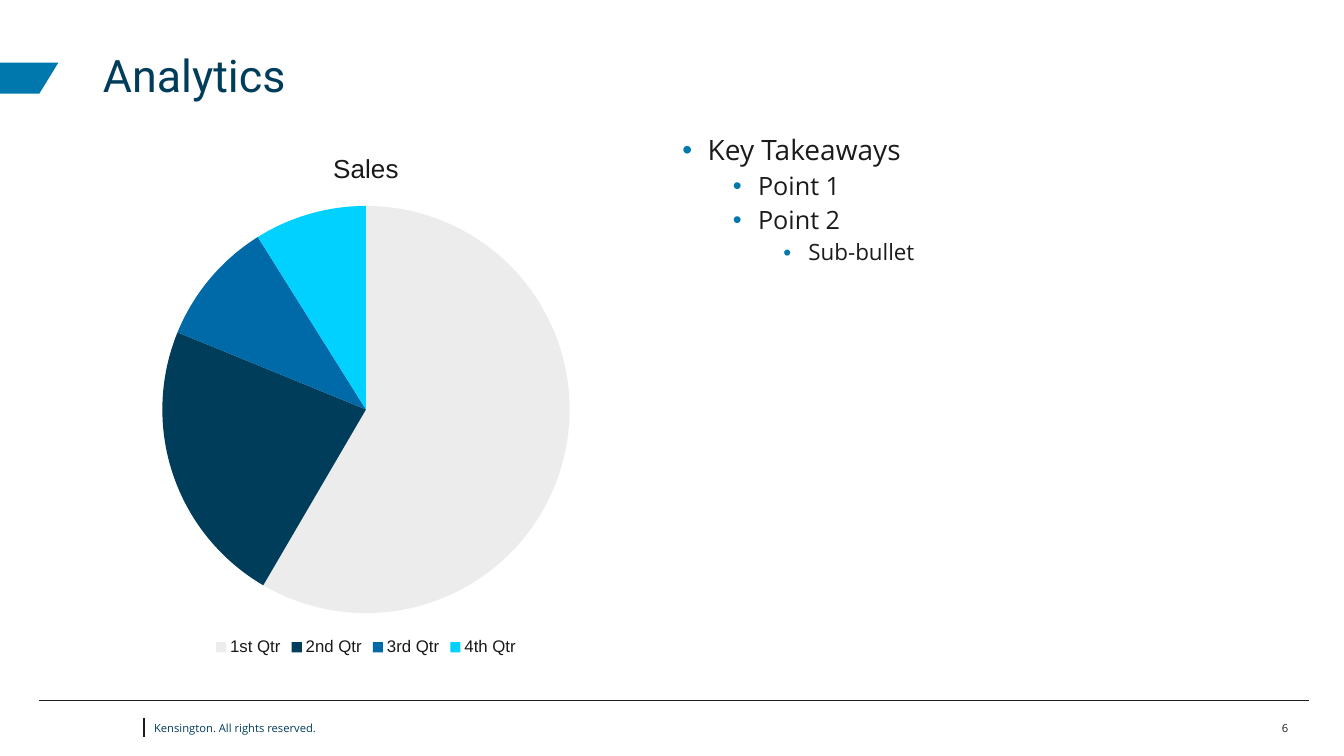
from lxml import etree
from pptx import Presentation
from pptx import util as u
from pptx.chart.data import CategoryChartData
from pptx.dml.color import RGBColor
from pptx.enum import chart as charts, shapes, text
from pptx.oxml import ns

NAVY, BLUE, INK, BLACK, CHART_INK = "003D5A", "0078AE", "1B1B1B", "231F20", "171A17"


def rgb(code):
    return RGBColor.from_string(code)


def style_font(font, name, size, color):
    font.name, font.size, font.color.rgb = name, u.Pt(size), rgb(color)
    font.bold = False


class Page:
    heading_font, body_font, chart_font = "Roboto", "Open Sans", "Arial"

    def __init__(self, deck):
        self.page = deck.slides.add_slide(deck.slide_layouts[5])

    def add_span(self, para, words, font, size, color):
        span = para.add_run()
        span.text = words
        style_font(span.font, font, size, color)

    def place(self, shape, left, top, width, height):
        shape.left, shape.top = u.Inches(left), u.Inches(top)
        shape.width, shape.height = u.Inches(width), u.Inches(height)

    def title(self, words, *area):
        box = self.page.shapes.title
        self.place(box, *area)
        box.text_frame.vertical_anchor = text.MSO_ANCHOR.MIDDLE
        para = box.text_frame.paragraphs[0]
        para.alignment, para.line_spacing = text.PP_ALIGN.LEFT, 0.9
        self.add_span(para, words, self.heading_font, 32, NAVY)

    def text_box(self, *area):
        box = self.page.shapes.add_textbox(*map(u.Inches, area))
        box.text_frame.word_wrap = True
        return box.text_frame

    def label(self, words, color, align, *area):
        para = self.text_box(*area).paragraphs[0]
        para.alignment = align
        self.add_span(para, words, self.body_font, 8, color)

    def bullets(self, items, *area):
        """Set (level, words) pairs as an indented list."""
        frame = self.text_box(*area)
        for index, (level, words) in enumerate(items):
            para = frame.add_paragraph() if index else frame.paragraphs[0]
            para.level, para.line_spacing = level, 0.9
            para.space_before = u.Pt(5 if index else 0)
            props = para._p.get_or_add_pPr()
            props.set("marL", str(u.Inches(0.25 + 0.5 * level)))
            props.set("indent", str(u.Inches(-0.25)))
            color = etree.SubElement(props, ns.qn("a:buClr"))
            etree.SubElement(color, ns.qn("a:srgbClr"), val=BLUE)
            etree.SubElement(props, ns.qn("a:buFont"), typeface="Arial")
            etree.SubElement(props, ns.qn("a:buChar"), char="•")
            self.add_span(para, words, self.body_font, 20 - 2 * level, INK)

    def line(self, color, *ends):
        rule = self.page.shapes.add_connector(
            shapes.MSO_CONNECTOR.STRAIGHT, *map(u.Inches, ends))
        rule.line.color.rgb, rule.line.width = rgb(color), u.Pt(1)
        etree.SubElement(rule._element.spPr, ns.qn("a:effectLst"))

    def polygon(self, color, points):
        corners = [(u.Inches(x), u.Inches(y)) for x, y in points]
        builder = self.page.shapes.build_freeform(*corners[0])
        builder.add_line_segments(corners[1:], close=True)
        shape = builder.convert_to_shape()
        shape.shadow.inherit = False
        shape.fill.solid()
        shape.fill.fore_color.rgb = rgb(color)
        shape.line.fill.background()

    def pie(self, title, slices, *area):
        """Draw a pie from (category, value, color) triples."""
        data = CategoryChartData()
        data.categories = [name for name, _, _ in slices]
        data.add_series("Series 1", [value for _, value, _ in slices])
        chart = self.page.shapes.add_chart(
            charts.XL_CHART_TYPE.PIE, *map(u.Inches, area), data).chart
        style_font(chart.font, self.chart_font, 10, NAVY)
        chart.has_title = True
        para = chart.chart_title.text_frame.paragraphs[0]
        self.add_span(para, title, self.chart_font, 18.6, CHART_INK)
        chart.chart_title.include_in_layout = False
        chart.has_legend = True
        chart.legend.position = charts.XL_LEGEND_POSITION.BOTTOM
        chart.legend.include_in_layout = False
        style_font(chart.legend.font, self.chart_font, 12, CHART_INK)
        plot = chart.plots[0]
        plot.vary_by_categories = True
        for index, (_, _, color) in enumerate(slices):
            look = plot.series[0].points[index].format
            look.fill.solid()
            look.fill.fore_color.rgb = rgb(color)
            look.line.fill.background()


def main():
    deck = Presentation()
    deck.slide_width, deck.slide_height = u.Inches(13.33), u.Inches(7.5)
    page = Page(deck)
    page.label("6", BLACK, text.PP_ALIGN.CENTER, 12.48, 7.11, 0.53, 0.24)
    page.label("Kensington. All rights reserved.", NAVY, text.PP_ALIGN.LEFT,
               1.43, 7.11, 3.46, 0.3)
    page.polygon(BLUE, [(-0.02, 0.62), (0.58, 0.62), (0.39, 0.93), (-0.02, 0.93)])
    page.line(BLACK, 0.39, 6.95, 12.98, 6.95)
    page.line(INK, 1.43, 7.12, 1.43, 7.31)
    page.title("Analytics", 0.92, 0.4, 11.5, 0.75)
    page.pie("Sales", [("1st Qtr", 59, "ECECEC"), ("2nd Qtr", 23, "003D5B"),
                       ("3rd Qtr", 10, "0069A7"), ("4th Qtr", 9, "00D1FF")],
             0.92, 1.3, 5.42, 5.25)
    page.bullets([(0, "Key Takeaways"), (1, "Point 1"), (1, "Point 2"),
                  (2, "Sub-bullet")], 6.67, 1.3, 5.75, 5.25)
    deck.save("out.pptx")


if __name__ == "__main__":
    main()
